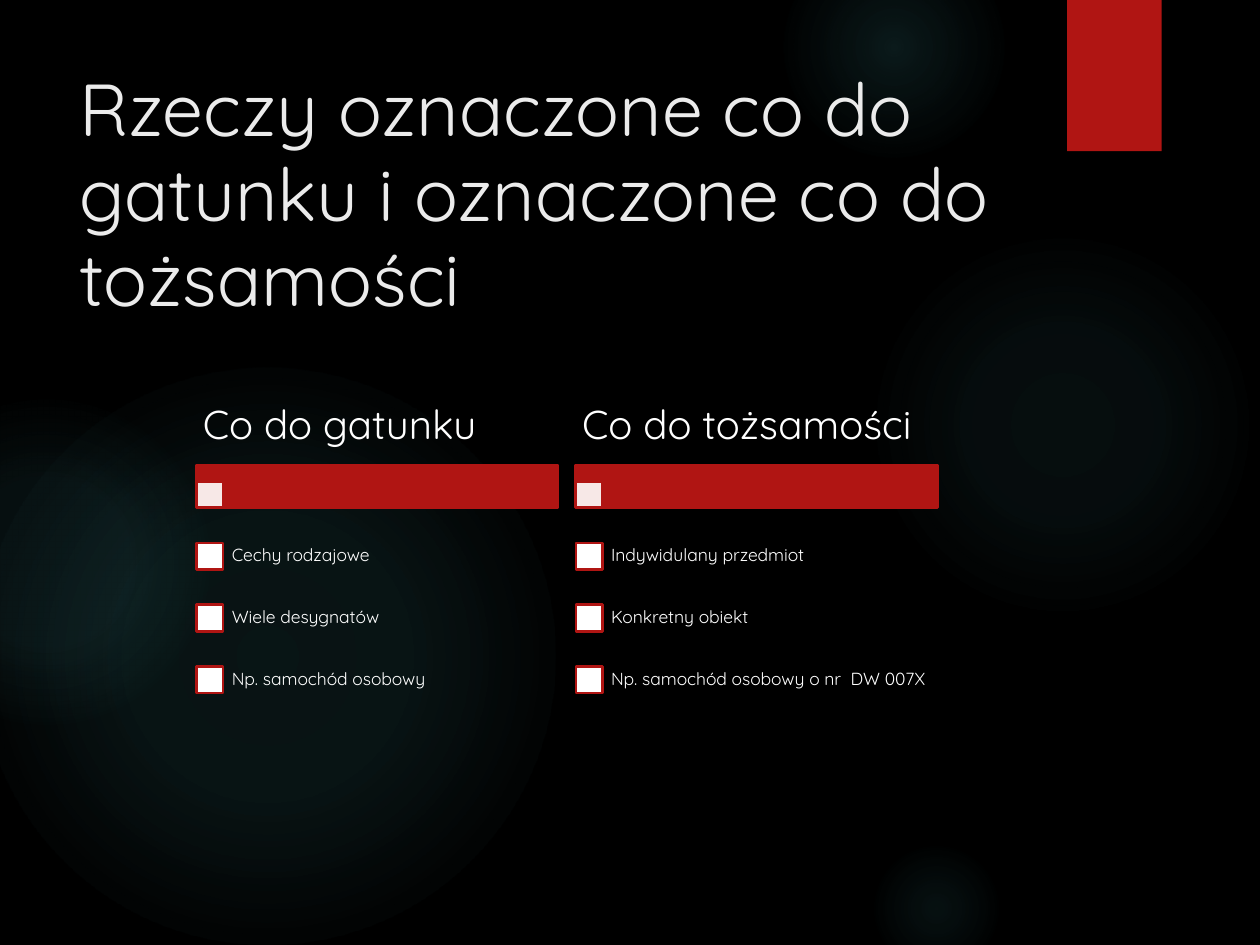
import pptx
import pptx.util
import pptx.dml.color
import pptx.enum.shapes
import pptx.enum.text
import pptx.oxml
import pptx.oxml.ns
from pptx.util import Inches

COLORS = {"background": "000000", "glow": "50B9C1", "accent": "B01513",
          "title": "EBEBEB", "text": "FFFFFF"}
FONT = "Quicksand"
TITLE = "Rzeczy oznaczone co do gatunku i oznaczone co do tożsamości"
COLUMNS = [
    ("Co do gatunku",
     ["Cechy rodzajowe", "Wiele desygnatów", "Np. samochód osobowy"]),
    ("Co do tożsamości",
     ["Indywidulany przedmiot", "Konkretny obiekt",
      "Np. samochód osobowy o nr  DW 007X"]),
]
GLOWS = [
    (6.89, 1.83, 3.08, [(0, 7), (36, 6), (69, 0)]),
    (6.22, -0.5, 1.75, [(0, 14), (36, 7), (73, 0)]),
    (6.89, 6.67, 1.08, [(0, 9), (36, 5), (66, 0)]),
    (-0.17, 2.92, 4.58, [(0, 11), (36, 10), (75, 0)]),
    (-0.92, 3.17, 2.58, [(0, 8), (36, 8), (72, 0)]),
]
COLUMN_LEFT, COLUMN_STEP, COLUMN_WIDTH = 1.56, 3.01, 2.87
ITEM_TOP, ITEM_STEP, ITEM_INDENT = 4.17, 0.49, 0.2
BOX_SIZE, BOX_OFFSET = 0.21, 0.14
NAMESPACE = pptx.oxml.ns.nsdecls("a")


def rgb(name):
    return pptx.dml.color.RGBColor.from_string(COLORS[name])


def add_block(kind, left, top, width, height, fill, outline=None):
    block = slide.shapes.add_shape(
        kind, Inches(left), Inches(top), Inches(width), Inches(height))
    block.shadow.inherit = False
    block.fill.solid()
    block.fill.fore_color.rgb = rgb(fill)
    if outline:
        block.line.color.rgb = rgb(outline)
        block.line.width = pptx.util.Pt(1.5)
    else:
        block.line.fill.background()
    return block


def add_glow(left, top, size, stops):
    glow = add_block(pptx.enum.shapes.MSO_SHAPE.OVAL, left, top, size, size, "glow")
    stop_xml = "".join(
        f'<a:gs pos="{position * 1000}"><a:srgbClr val="{COLORS["glow"]}">'
        f'<a:alpha val="{alpha * 1000}"/></a:srgbClr></a:gs>'
        for position, alpha in stops)
    gradient = pptx.oxml.parse_xml(
        f'<a:gradFill {NAMESPACE} rotWithShape="1"><a:gsLst>{stop_xml}</a:gsLst>'
        '<a:path path="circle"><a:fillToRect l="50000" t="50000" r="50000" b="50000"/>'
        '</a:path></a:gradFill>')
    properties = glow.element.spPr
    properties.replace(properties.find(pptx.oxml.ns.qn("a:solidFill")), gradient)


def add_text(wording, left, top, width, height, size, color, insets, anchor, spacing):
    box = slide.shapes.add_textbox(
        Inches(left), Inches(top), Inches(width), Inches(height))
    frame = box.text_frame
    frame.word_wrap = True
    frame.vertical_anchor = anchor
    frame.margin_left = frame.margin_right = Inches(insets[0])
    frame.margin_top = frame.margin_bottom = Inches(insets[1])
    paragraph = frame.paragraphs[0]
    paragraph.line_spacing = spacing
    run = paragraph.add_run()
    run.text = wording
    run.font.name = FONT
    run.font.size = pptx.util.Pt(size)
    run.font.color.rgb = rgb(color)


def add_checkbox(left, top, alpha=None):
    checkbox = add_block(RECTANGLE, left, top, BOX_SIZE, BOX_SIZE, "text", "accent")
    if alpha:
        fill_color = checkbox.element.spPr.find(
            pptx.oxml.ns.qn("a:solidFill")).find(pptx.oxml.ns.qn("a:srgbClr"))
        fill_color.append(pptx.oxml.parse_xml(
            f'<a:alpha {NAMESPACE} val="{alpha * 1000}"/>'))


RECTANGLE = pptx.enum.shapes.MSO_SHAPE.RECTANGLE
TOP = pptx.enum.text.MSO_ANCHOR.TOP
MIDDLE = pptx.enum.text.MSO_ANCHOR.MIDDLE

presentation = pptx.Presentation()
presentation.slide_width = Inches(10)
presentation.slide_height = Inches(7.5)
slide = presentation.slides.add_slide(presentation.slide_layouts[6])
slide.background.fill.solid()
slide.background.fill.fore_color.rgb = rgb("background")

for glow_place in GLOWS:
    add_glow(*glow_place)
add_block(RECTANGLE, 8.47, 0, 0.75, 1.2, "accent")
add_text(TITLE, 0.53, 0.5, 7.72, 1.53, 42, "title", (0.1, 0.05), TOP, 0.96)

for column, (heading, items) in enumerate(COLUMNS):
    left = COLUMN_LEFT + column * COLUMN_STEP
    add_block(RECTANGLE, left, 3.69, COLUMN_WIDTH, 0.34, "accent", "accent")
    add_checkbox(left, 3.82, 90)
    add_text(heading, left, 3.08, COLUMN_WIDTH, 0.61, 23, "text",
             (0.05, 0.03), MIDDLE, 0.9)
    for row, item in enumerate(items):
        top = ITEM_TOP + row * ITEM_STEP
        add_checkbox(left, top + BOX_OFFSET)
        add_text(item, left + ITEM_INDENT, top, COLUMN_WIDTH - ITEM_INDENT,
                 ITEM_STEP, 10, "text", (0.08, 0.08), MIDDLE, 0.9)

presentation.save("out.pptx")
